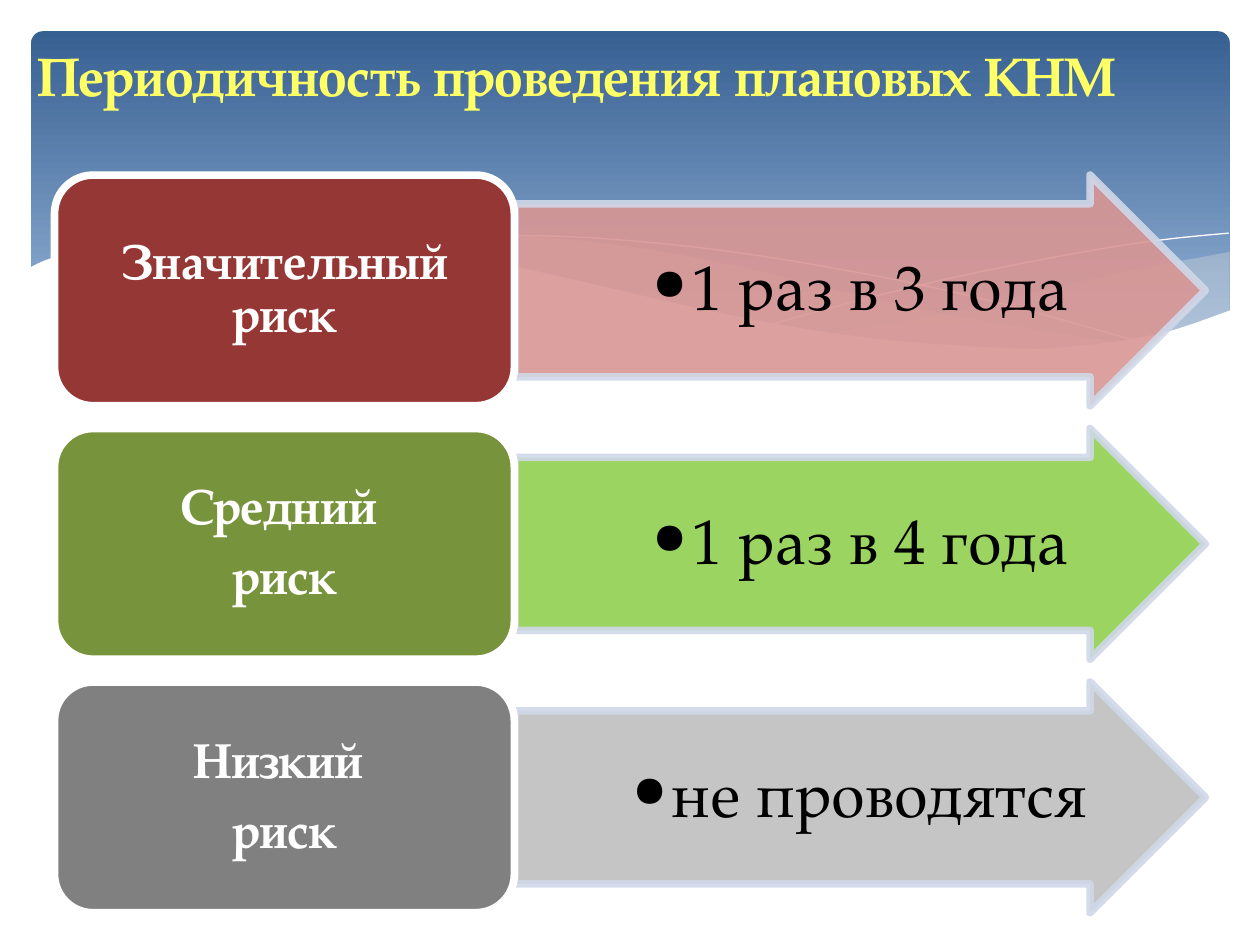
from dataclasses import dataclass

import pptx
import pptx.dml.color
import pptx.enum.shapes
import pptx.enum.text
import pptx.oxml.ns
import pptx.util
from lxml import etree

Cm, Pt = pptx.util.Cm, pptx.util.Pt
MSO_SHAPE = pptx.enum.shapes.MSO_SHAPE
PP_ALIGN = pptx.enum.text.PP_ALIGN
MSO_ANCHOR = pptx.enum.text.MSO_ANCHOR
qn = pptx.oxml.ns.qn

Points = list[tuple[float, float]]
FONT = "TeX Gyre Pagella"
WHITE = "FFFFFF"

ROW_TOP, ROW_PITCH, ROW_HEIGHT = 3.53, 5.11, 4.65
BOX_LEFT, BOX_WIDTH = 1.1, 9.27
ARROW_LEFT, ARROW_WIDTH = 10.38, 13.92


@dataclass
class Risk:
    name: str
    frequency: str
    box_color: str
    arrow_color: str


@dataclass
class Wave:
    """A shape outlined by smooth strokes, in cm; without a fill it is a hairline."""
    strokes: list[Points]
    fill: str | None = None
    opacity: int = 100


RISKS = [
    Risk("Значительный риск", "1 раз в 3 года", "953735", "D99694"),
    Risk("Средний \nриск", "1 раз в 4 года", "77933C", "92D050"),
    Risk("Низкий \nриск", "не проводятся", "808080", "BFBFBF"),
]

WAVES = [
    Wave([[(24.79, 5.08), (23.01, 5.41), (21.87, 5.66), (19.13, 6.3), (16.79, 6.73)],
          [(16.79, 6.73), (18.26, 6.91), (19.53, 7.04), (20.68, 7.06),
           (21.92, 6.99), (23.19, 6.78), (24.1, 6.53), (24.79, 6.27)]],
         "EEECE1", 29),
    Wave([[(22.68, 6.93), (19.69, 6.45), (16.97, 5.87), (14.83, 5.36),
           (12.75, 4.98), (10.67, 4.75), (9.17, 4.7), (7.26, 4.85)],
          [(7.26, 4.85), (9.19, 5.16), (11.4, 5.64), (14.38, 6.3),
           (16.89, 6.76), (19, 7.01), (20.78, 7.06), (22.68, 6.93)]],
         "EEECE1", 40),
    Wave([[(7.85, 4.95), (8.97, 4.8), (10.57, 4.75), (12.42, 4.83),
           (14.78, 5.08), (17.65, 5.56), (20.19, 6.12), (23.04, 6.91)]]),
    Wave([[(15.57, 6.53), (17.65, 5.97), (19.71, 5.49), (22, 5.05),
           (23.47, 4.83), (24.77, 4.7)]]),
    Wave([[(24.82, 6.25), (23.37, 6.73), (21.59, 6.99), (20.14, 7.01), (17.48, 6.81),
           (14.71, 6.35), (11.35, 5.59), (9.27, 5.13), (7.42, 4.83), (5.36, 4.67),
           (3.71, 4.7), (2.16, 4.9), (1.02, 5.21), (0.58, 5.41)],
          [(0.58, 8.36), (24.82, 8.36)]],
         WHITE),
]


def rgb(color: str) -> pptx.dml.color.RGBColor:
    return pptx.dml.color.RGBColor.from_string(color)


def paint(fill, color: str, opacity: int = 100) -> None:
    fill.solid()
    fill.fore_color.rgb = rgb(color)
    if opacity < 100:
        clr = fill._xPr.find(f".//{qn('a:solidFill')}/{qn('a:srgbClr')}")
        etree.SubElement(clr, qn("a:alpha"), val=str(opacity * 1000))


def smooth(points: Points, steps: int = 5) -> Points:
    """Catmull-Rom curve through the points; two points stay a straight line."""
    if len(points) < 3:
        return points
    ends = [points[0], *points, points[-1]]
    curve = []
    for a, b, c, d in zip(ends, ends[1:], ends[2:], ends[3:]):
        for t in (i / steps for i in range(steps)):
            x, y = (
                q + 0.5 * t * (r - p + t * (2 * p - 5 * q + 4 * r - s
                                            + t * (3 * (q - r) + s - p)))
                for p, q, r, s in zip(a, b, c, d))
            curve.append((x, y))
    return curve + [points[-1]]


def add_wave(shapes, wave: Wave) -> None:
    points = [(Cm(x), Cm(y)) for stroke in wave.strokes for x, y in smooth(stroke)]
    builder = shapes.build_freeform(*points[0])
    builder.add_line_segments(points[1:], close=wave.fill is not None)
    sp = builder.convert_to_shape()
    sp.shadow.inherit = False
    if wave.fill:
        paint(sp.fill, wave.fill, wave.opacity)
        sp.line.fill.background()
    else:
        sp.fill.background()
        paint(sp.line.fill, WHITE)
        sp.line.width = Pt(0)


def add_header(shapes) -> None:
    sp = shapes.add_shape(MSO_SHAPE.ROUNDED_RECTANGLE,
                          Cm(0.63), Cm(0.63), Cm(24.16), Cm(6.86))
    sp.adjustments[0] = 0.034
    sp.shadow.inherit = False
    sp.line.fill.background()
    sp.fill.gradient()
    sp.fill.gradient_angle = 270
    for stop, color, pos in zip(sp.fill.gradient_stops, ("376092", "95B3D7"), (0, 0.9)):
        stop.color.rgb = rgb(color)
        stop.position = pos


def add_block(shapes, kind, left: float, top: float, width: float, color: str,
              line: str, opacity: int = 100):
    sp = shapes.add_shape(kind, Cm(left), Cm(top), Cm(width), Cm(ROW_HEIGHT))
    sp.shadow.inherit = False
    paint(sp.fill, color, opacity)
    paint(sp.line.fill, line, opacity)
    sp.line.width = Pt(4.33)
    return sp


def write(sp, text: str, size: float, color: str, bold: bool, align, anchor,
          insets: tuple[float, float, float, float]) -> None:
    """Insets run left, top, right, bottom in cm."""
    tf = sp.text_frame
    tf.text = text
    tf.word_wrap = True
    tf.auto_size = pptx.enum.text.MSO_AUTO_SIZE.NONE
    tf.vertical_anchor = anchor
    tf.margin_left, tf.margin_top, tf.margin_right, tf.margin_bottom = map(Cm, insets)
    for p in tf.paragraphs:
        p.alignment = align
        for r in p.runs:
            r.font.name = FONT
            r.font.size = Pt(size)
            r.font.bold = bold
            r.font.color.rgb = rgb(color)


def add_bullet(p) -> None:
    pPr = p._p.get_or_add_pPr()
    pPr.set("marL", str(Cm(0.79)))
    pPr.set("indent", str(-Cm(0.79)))
    etree.SubElement(pPr, qn("a:buFont"), typeface=FONT)
    etree.SubElement(pPr, qn("a:buChar"), char="•")


def add_risk(shapes, risk: Risk, top: float) -> None:
    arrow = add_block(shapes, MSO_SHAPE.RIGHT_ARROW, ARROW_LEFT, top, ARROW_WIDTH,
                      risk.arrow_color, "D0D8E8", 90)
    arrow.adjustments[0] = 0.75
    # The wider left inset centres the text on the whole arrow, tip included.
    write(arrow, risk.frequency, 36, "000000", False, PP_ALIGN.CENTER,
          MSO_ANCHOR.MIDDLE, (1.83, 0.08, 0.08, 0.08))
    p = arrow.text_frame.paragraphs[0]
    p.line_spacing = 0.9
    add_bullet(p)

    box = add_block(shapes, MSO_SHAPE.ROUNDED_RECTANGLE, BOX_LEFT, top, BOX_WIDTH,
                    risk.box_color, WHITE)
    write(box, risk.name, 28, WHITE, True, PP_ALIGN.CENTER,
          MSO_ANCHOR.MIDDLE, (0.3, 0.15, 0.3, 0.15))
    for p in box.text_frame.paragraphs:
        p.line_spacing = 0.9
        p.space_after = Pt(10)


def main() -> None:
    prs = pptx.Presentation()
    prs.slide_width, prs.slide_height = Cm(25.4), Cm(19.05)
    slide = prs.slides.add_slide(prs.slide_layouts.get_by_name("Title Only"))
    shapes = slide.shapes

    add_header(shapes)
    for wave in WAVES:
        add_wave(shapes, wave)
    for i, risk in enumerate(RISKS):
        add_risk(shapes, risk, ROW_TOP + i * ROW_PITCH)

    title = shapes.title
    title.left, title.top, title.width, title.height = Cm(0.5), Cm(0.73), Cm(24.9), Cm(1.57)
    write(title, "Периодичность проведения плановых КНМ", 31, "FFFF66", True,
          PP_ALIGN.LEFT, MSO_ANCHOR.TOP, (0.25, 0.13, 0.25, 0.13))
    title.element.getparent().append(title.element)  # bring to front

    prs.save("out.pptx")


if __name__ == "__main__":
    main()
